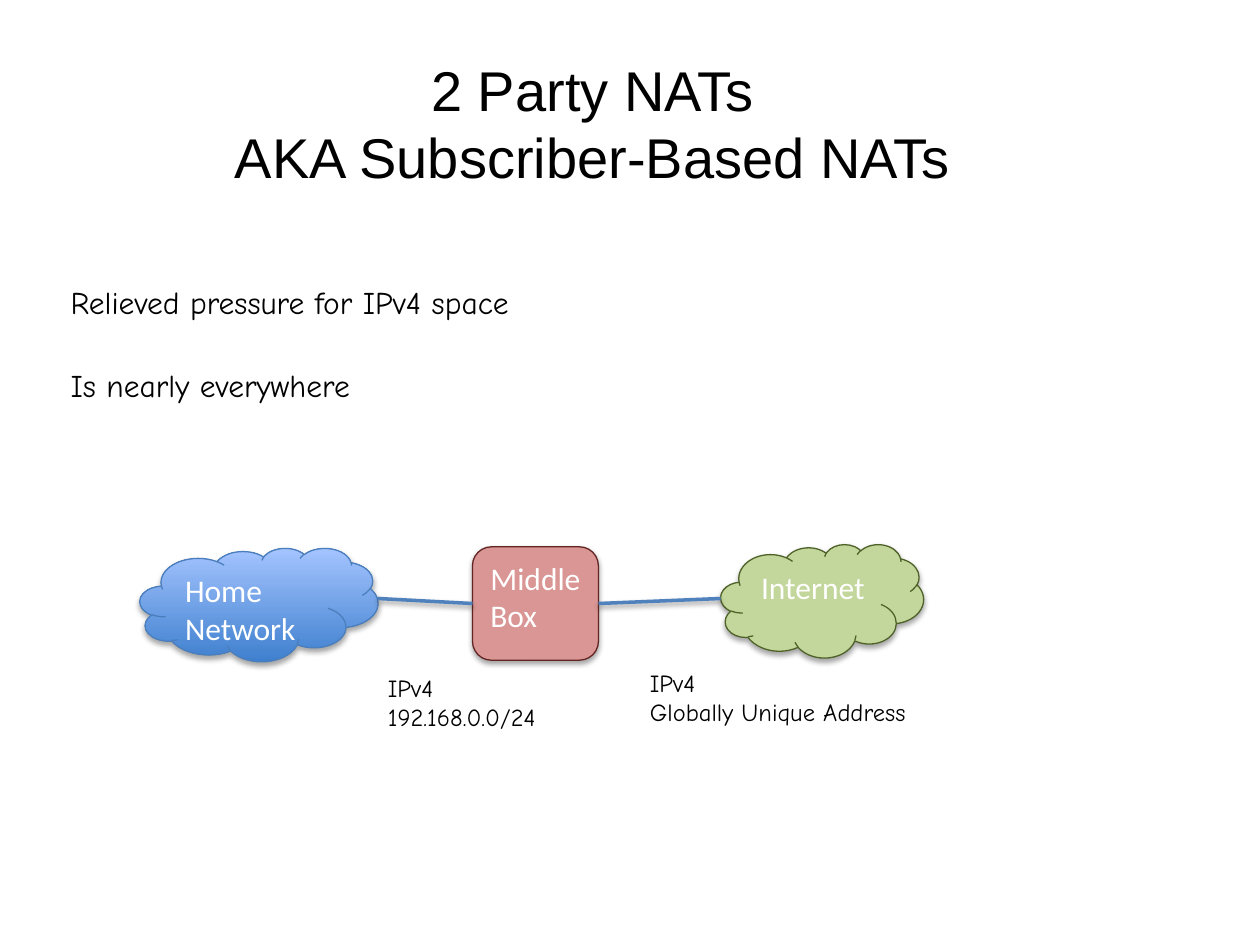
"""Build the slide about two-party NATs."""
from dataclasses import dataclass
from typing import Optional

import pptx
import pptx.dml.color
import pptx.enum.shapes
import pptx.enum.text
import pptx.oxml.ns
import pptx.util
from lxml import etree

Inches = pptx.util.Inches
Pt = pptx.util.Pt
RGBColor = pptx.dml.color.RGBColor
Shape = pptx.enum.shapes.MSO_SHAPE
Align = pptx.enum.text.PP_ALIGN
qn = pptx.oxml.ns.qn

BLACK = RGBColor(0x00, 0x00, 0x00)
WHITE = RGBColor(0xFF, 0xFF, 0xFF)
DEEP_BLUE = RGBColor(0x3F, 0x80, 0xCE)
PALE_BLUE = RGBColor(0xA4, 0xC4, 0xFF)
BLUE_EDGE = RGBColor(0x4B, 0x7E, 0xBC)
ROSE = RGBColor(0xD9, 0x96, 0x94)
ROSE_EDGE = RGBColor(0x63, 0x25, 0x23)
GREEN = RGBColor(0xC3, 0xD6, 0x9B)
GREEN_EDGE = RGBColor(0x4F, 0x62, 0x28)
LINK_BLUE = RGBColor(0x4F, 0x81, 0xBD)


@dataclass(frozen=True)
class TextBlock:
    lines: tuple[str, ...]
    left: float
    top: float
    width: float
    height: float
    size: float
    font: str = "Comic Neue"
    align: Align = Align.LEFT
    space_after: float = 0
    side_inset: float = 0.1
    top_inset: float = 0.05
    wrap: bool = True


@dataclass(frozen=True)
class Node:
    label: str
    kind: Shape
    left: float
    top: float
    width: float
    fill: RGBColor
    edge: RGBColor
    fill_top: Optional[RGBColor] = None
    height: float = 0.9


@dataclass(frozen=True)
class Link:
    start: tuple[float, float]
    end: tuple[float, float]


TEXT_BLOCKS = (
    TextBlock(("Relieved pressure for IPv4 space", "Is nearly everywhere"),
              0.47, 2.25, 9.17, 1.67, 18, space_after=25.5, side_inset=0.09, top_inset=0),
    TextBlock(("2 Party NATs", "AKA Subscriber-Based NATs"),
              0.58, 0.39, 8.25, 1.67, 32, font="Arial", align=Align.CENTER),
    TextBlock(("IPv4", "192.168.0.0/24"), 2.98, 5.29, 1.66, 0.57, 14, wrap=False),
    TextBlock(("IPv4", "Globally Unique Address"), 5.06, 5.25, 2.66, 0.57, 14, wrap=False),
)
NODES = (
    Node("Home Network", Shape.CLOUD, 1.11, 4.35, 1.89, DEEP_BLUE, BLUE_EDGE, PALE_BLUE),
    Node("Middle Box", Shape.ROUNDED_RECTANGLE, 3.75, 4.34, 1, ROSE, ROSE_EDGE),
    Node("Internet", Shape.CLOUD, 5.72, 4.32, 1.61, GREEN, GREEN_EDGE),
)
LINKS = (Link((3, 4.75), (3.75, 4.79)), Link((4.75, 4.79), (5.72, 4.75)))


def add_span(para, text: str, size: float, font: str, color: RGBColor) -> None:
    """Add one formatted run to a paragraph."""
    span = para.add_run()
    span.text = text
    span.font.size = Pt(size)
    span.font.name = font
    span.font.color.rgb = color


def add_shadow(item, distance: float, opacity: int) -> None:
    """Cast a soft black shadow straight down."""
    effects = etree.SubElement(item.element.spPr, qn("a:effectLst"))
    shadow = etree.SubElement(effects, qn("a:outerShdw"), blurRad=str(Pt(3.1)),
                              dist=str(Pt(distance)), dir="5400000", rotWithShape="0")
    color = etree.SubElement(shadow, qn("a:srgbClr"), val=str(BLACK))
    etree.SubElement(color, qn("a:alpha"), val=str(opacity * 1000))


def draw_text(page, block: TextBlock) -> None:
    """Draw a text box with one paragraph per line."""
    box = page.shapes.add_textbox(Inches(block.left), Inches(block.top),
                                  Inches(block.width), Inches(block.height))
    frame = box.text_frame
    frame.word_wrap = block.wrap
    frame.margin_left = frame.margin_right = Inches(block.side_inset)
    frame.margin_top = frame.margin_bottom = Inches(block.top_inset)
    if not block.wrap:
        frame.auto_size = pptx.enum.text.MSO_AUTO_SIZE.SHAPE_TO_FIT_TEXT
    for index, line in enumerate(block.lines):
        para = frame.add_paragraph() if index else frame.paragraphs[0]
        para.alignment = block.align
        para.space_after = Pt(block.space_after)
        add_span(para, line, block.size, block.font, BLACK)


def draw_node(page, node: Node) -> None:
    """Draw a labelled network element."""
    box = page.shapes.add_shape(node.kind, Inches(node.left), Inches(node.top),
                                Inches(node.width), Inches(node.height))
    if node.fill_top is None:
        box.fill.solid()
        box.fill.fore_color.rgb = node.fill
    else:
        box.fill.gradient()
        box.fill.gradient_angle = 90
        for stop, color, position in zip(box.fill.gradient_stops,
                                         (node.fill, node.fill_top), (0, 1)):
            stop.color.rgb = color
            stop.position = position
    box.line.color.rgb = node.edge
    box.line.width = Pt(0.75)
    add_shadow(box, 1.8, 35)
    frame = box.text_frame
    frame.word_wrap = True
    frame.vertical_anchor = pptx.enum.text.MSO_ANCHOR.TOP
    para = frame.paragraphs[0]
    para.alignment = Align.LEFT
    add_span(para, node.label, 18, "Calibri", WHITE)


def draw_link(page, link: Link) -> None:
    """Draw a line between two network elements."""
    line = page.shapes.add_connector(pptx.enum.shapes.MSO_CONNECTOR.STRAIGHT,
                                     *map(Inches, link.start + link.end))
    line.line.color.rgb = LINK_BLUE
    line.line.width = Pt(2)
    add_shadow(line, 1.6, 38)


def main() -> None:
    """Assemble and save the deck."""
    deck = pptx.Presentation()
    deck.slide_width, deck.slide_height = Inches(10), Inches(7.5)
    page = deck.slides.add_slide(deck.slide_layouts[6])
    body, title, *captions = TEXT_BLOCKS
    for block in (body, title):
        draw_text(page, block)
    for node in NODES:
        draw_node(page, node)
    for link in LINKS:
        draw_link(page, link)
    for caption in captions:
        draw_text(page, caption)
    deck.save("out.pptx")


if __name__ == "__main__":
    main()
